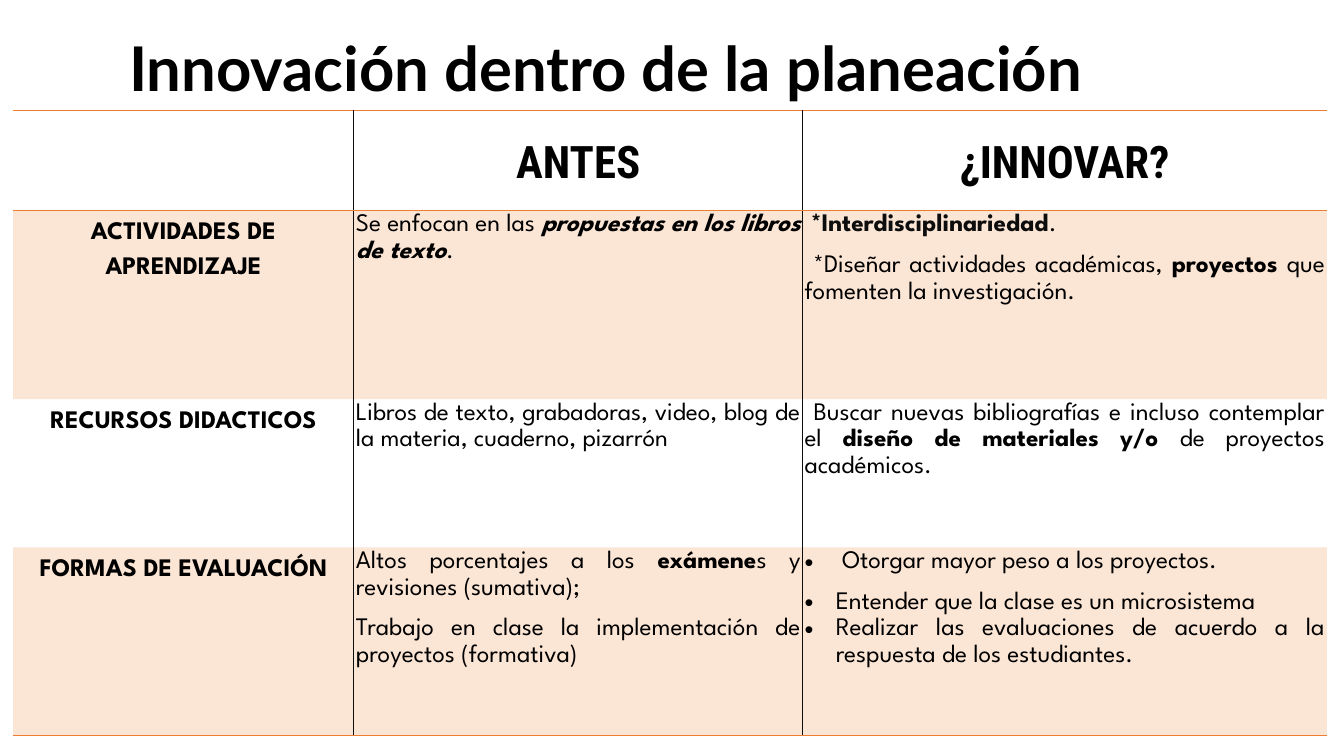
from dataclasses import dataclass

from lxml.etree import SubElement
from pptx import Presentation
from pptx.dml.color import RGBColor
from pptx.enum.text import MSO_ANCHOR, MSO_AUTO_SIZE, PP_ALIGN as Align
from pptx.oxml.ns import qn
from pptx.util import Pt

EMU_PER_PX = 9144  # 100 px to the inch


def px(length):
    return length * EMU_PER_PX


@dataclass(frozen=True)
class Theme:
    ink: str = "000000"
    soft_ink: str = "0D0D0D"
    accent: str = "ED7D31"
    band_opacity: int = 20
    title_font: str = "Lato"
    header_font: str = "Roboto Condensed"
    body_font: str = "League Spartan"
    title_size: int = 44
    header_size: int = 32
    body_size: int = 18
    rule_width: int = 1


def bold(text, **extra):
    return text, {"bold": True, **extra}


def add_text(paragraph, text, *, font, size, color, bold=False, italic=False):
    run = paragraph.add_run()
    run.text = text
    run.font.name = font
    run.font.size = Pt(size)
    run.font.color.rgb = RGBColor.from_string(color)
    run.font.bold = bold
    run.font.italic = italic


def set_bullet(paragraph, indent):
    properties = paragraph._p.get_or_add_pPr()
    properties.set("marL", str(indent))
    properties.set("indent", str(-indent))
    SubElement(properties, qn("a:buFont"), typeface="Arial")
    SubElement(properties, qn("a:buChar"), char="•")


def set_border(cell, side, color, width):
    """Draw one side of a cell, or hide it when color is None."""
    properties = cell._tc.get_or_add_tcPr()
    line = SubElement(properties, qn(f"a:ln{side}"), w=str(Pt(width)))
    if color is None:
        SubElement(line, qn("a:noFill"))
    else:
        fill = SubElement(line, qn("a:solidFill"))
        SubElement(fill, qn("a:srgbClr"), val=color)


def set_tint(cell, color, opacity):
    cell.fill.solid()
    cell.fill.fore_color.rgb = RGBColor.from_string(color)
    color_element = cell._tc.tcPr.find(f"{qn('a:solidFill')}/{qn('a:srgbClr')}")
    SubElement(color_element, qn("a:alpha"), val=str(opacity * 1000))


class SlideBuilder:
    def __init__(self, slide, theme):
        self.slide = slide
        self.theme = theme

    def title(self, text, left, top, width, height):
        theme = self.theme
        shape = self.slide.shapes.title
        shape.left, shape.top = px(left), px(top)
        shape.width, shape.height = px(width), px(height)
        frame = shape.text_frame
        frame.auto_size = MSO_AUTO_SIZE.NONE
        frame.vertical_anchor = MSO_ANCHOR.MIDDLE
        frame.word_wrap = True
        paragraph = frame.paragraphs[0]
        paragraph.alignment = Align.LEFT
        add_text(paragraph, text, font=theme.title_font, size=theme.title_size,
                 color=theme.ink, bold=True)

    def table(self, left, top, columns, rows, content):
        shape = self.slide.shapes.add_table(
            len(rows), len(columns), px(left), px(top), px(sum(columns)), px(sum(rows)))
        table = shape.table
        table.first_row = table.horz_banding = False
        for column, width in zip(table.columns, columns):
            column.width = px(width)
        for row, height in zip(table.rows, rows):
            row.height = px(height)
        for r, row_content in enumerate(content):
            for c, paragraphs in enumerate(row_content):
                cell = table.cell(r, c)
                self.borders(cell, r, c, len(rows) - 1, len(columns) - 1)
                if r % 2:
                    set_tint(cell, self.theme.accent, self.theme.band_opacity)
                else:
                    cell.fill.background()
                self.cell_text(cell, paragraphs, heading=r == 0, centered=r == 0 or c == 0)

    def borders(self, cell, r, c, last_row, last_column):
        theme = self.theme
        colors = {
            "L": theme.soft_ink if c > 0 else None,
            "R": theme.soft_ink if c < last_column else None,
            "T": theme.accent if r <= 1 else None,
            "B": theme.accent if r in (0, last_row) else None,
        }
        for side, color in colors.items():
            set_border(cell, side, color, theme.rule_width)

    def cell_text(self, cell, paragraphs, heading, centered):
        """Fill a cell; each paragraph is a dict of runs, bullet and space after."""
        theme = self.theme
        cell.margin_left = cell.margin_right = px(2)
        cell.margin_top = cell.margin_bottom = 0
        base = {
            "font": theme.header_font if heading else theme.body_font,
            "size": theme.header_size if heading else theme.body_size,
            "color": theme.ink,
            "bold": centered,
        }
        frame = cell.text_frame
        for index, content in enumerate(paragraphs):
            paragraph = frame.add_paragraph() if index else frame.paragraphs[0]
            if content["bullet"]:
                set_bullet(paragraph, px(31))
            paragraph.alignment = Align.CENTER if centered else Align.JUSTIFY
            paragraph.line_spacing = 1.5 if centered else 1.15
            paragraph.space_after = Pt(content["after"])
            for run in content["runs"]:
                text, style = (run, {}) if isinstance(run, str) else run
                add_text(paragraph, text, **{**base, **style})


def para(*runs, bullet=False, after=10):
    return {"runs": runs, "bullet": bullet, "after": after}


def main():
    theme = Theme()
    presentation = Presentation()
    presentation.slide_width, presentation.slide_height = px(1333), px(750)
    slide = presentation.slides.add_slide(presentation.slide_layouts[5])
    builder = SlideBuilder(slide, theme)

    builder.title("Innovación dentro de la planeación", 118, 22, 1150, 88)

    content = [
        [[], [para("ANTES")], [para("¿INNOVAR?")]],
        [
            [para("ACTIVIDADES DE APRENDIZAJE")],
            [para("Se enfocan en las ",
                  bold("propuestas en los libros de texto", italic=True), ".")],
            [para(bold(" *Interdisciplinariedad", color=theme.soft_ink), "."),
             para(" *Diseñar actividades académicas, ", bold("proyectos"),
                  " que fomenten la investigación.")],
        ],
        [
            [para("RECURSOS DIDACTICOS")],
            [para("Libros de texto, grabadoras, video, blog de la materia, "
                  "cuaderno, pizarrón")],
            [para(" Buscar nuevas bibliografías e incluso contemplar el ",
                  bold("diseño de materiales y/o "), "de proyectos académicos.")],
        ],
        [
            [para("FORMAS DE EVALUACIÓN")],
            [para("Altos porcentajes a los ", bold("exámene"),
                  "s y revisiones (sumativa);"),
             para("Trabajo en clase la implementación de proyectos (formativa)")],
            [para(" Otorgar mayor peso a los proyectos.", bullet=True),
             para("Entender que la clase es un microsistema", bullet=True, after=0),
             para("Realizar las evaluaciones de acuerdo a la respuesta de los "
                  "estudiantes.", bullet=True, after=0)],
        ],
    ]
    builder.table(13, 110, [338, 445, 520], [99, 187, 147, 187], content)

    presentation.save("out.pptx")


if __name__ == "__main__":
    main()
